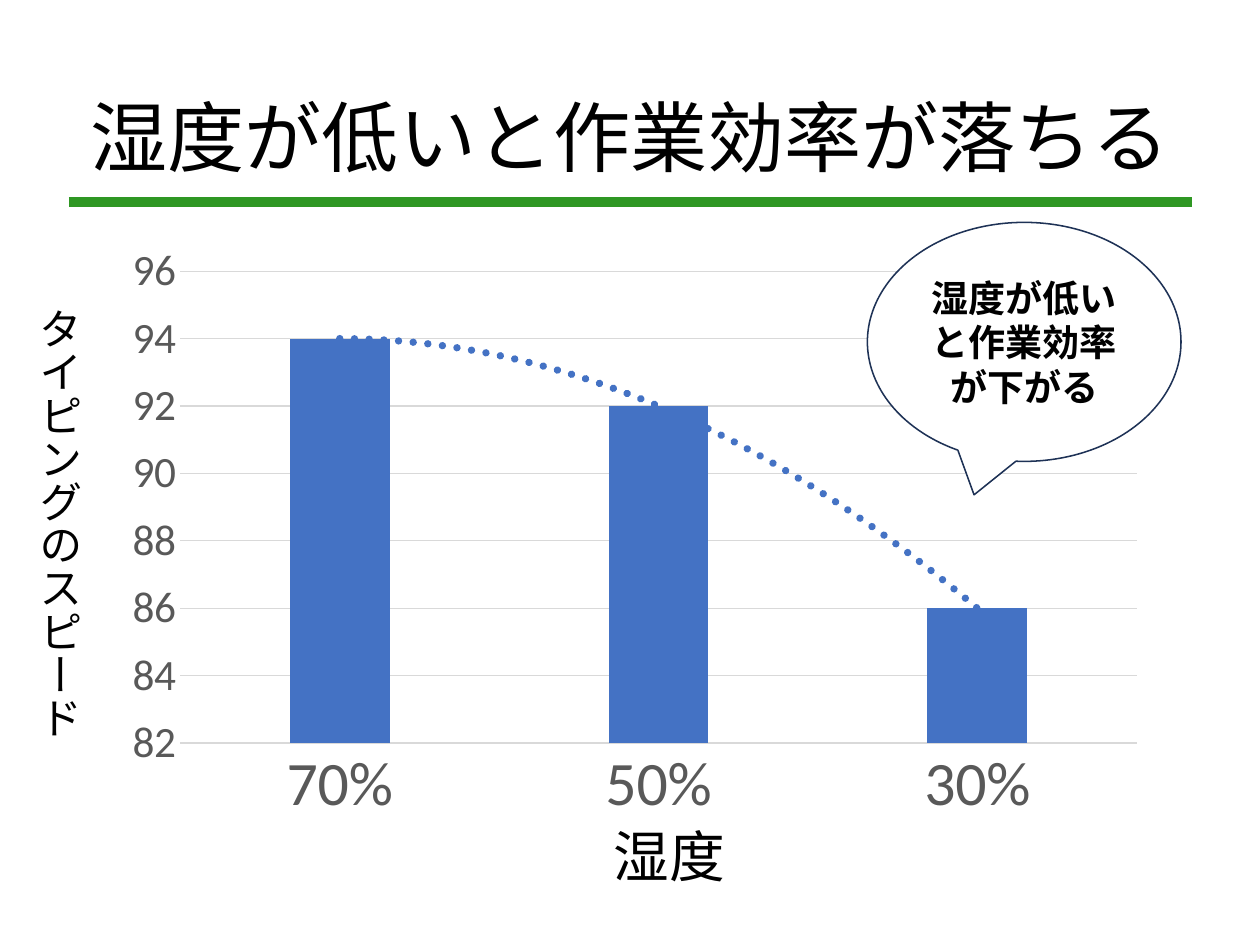
"""Build a slide showing that typing speed falls with humidity."""
from lxml import etree
from pptx import Presentation
from pptx.chart import data
from pptx.dml.color import RGBColor
from pptx.enum import chart as charts, dml, shapes, text
from pptx.oxml import ns, parse_xml
from pptx.util import Inches, Pt

BLACK = RGBColor(0x00, 0x00, 0x00)
WHITE = RGBColor(0xFF, 0xFF, 0xFF)
GRAY = RGBColor(0x59, 0x59, 0x59)
GRID = RGBColor(0xD9, 0xD9, 0xD9)
BLUE = RGBColor(0x44, 0x72, 0xC4)
NAVY = RGBColor(0x1E, 0x32, 0x56)
GREEN = RGBColor(0x2F, 0x97, 0x23)
JAPANESE_FONT = "Noto Sans CJK JP"


def write_text(shape, content, size, bold=False, align=None, anchor=None,
               wrap=True, spacing=None):
    frame = shape.text_frame
    frame.word_wrap = wrap
    frame.auto_size = text.MSO_AUTO_SIZE.NONE if wrap else text.MSO_AUTO_SIZE.SHAPE_TO_FIT_TEXT
    if anchor is not None:
        frame.vertical_anchor = anchor
    paragraph = frame.paragraphs[0]
    paragraph.alignment = align
    paragraph.line_spacing = spacing
    run = paragraph.add_run()
    run.text = content
    run.font.size = Pt(size)
    run.font.bold = bold
    run.font.name = JAPANESE_FONT
    run.font.color.rgb = BLACK
    etree.SubElement(run.font._element, ns.qn("a:ea"), typeface=JAPANESE_FONT)
    return frame


presentation = Presentation()
presentation.slide_width = Inches(11.33)
presentation.slide_height = Inches(8.5)
slide = presentation.slides.add_slide(presentation.slide_layouts[5])

title = slide.shapes.title
title.left, title.top = Inches(0.67), Inches(0.45)
title.width, title.height = Inches(10), Inches(1.64)
write_text(title, "湿度が低いと作業効率が落ちる", 49.9, align=text.PP_ALIGN.CENTER,
           anchor=text.MSO_ANCHOR.MIDDLE, spacing=0.9)

speed_data = data.CategoryChartData(number_format="General")
speed_data.categories = [0.7, 0.5, 0.3]
speed_data.categories.number_format = "0%"
speed_data.add_series("Series 1", [94, 92, 86])
chart = slide.shapes.add_chart(
    charts.XL_CHART_TYPE.COLUMN_CLUSTERED, Inches(1), Inches(2.1),
    Inches(9.42), Inches(5.4), speed_data).chart
chart.has_legend = False
chart.has_title = False
chart.font.name = "Calibri"
chart.font.size = Pt(10)

plot = chart.plots[0]
plot.gap_width = 219
plot.overlap = -27
plot.vary_by_categories = False
series = plot.series[0]
series.format.fill.solid()
series.format.fill.fore_color.rgb = BLUE

humidity_axis, speed_axis = chart.category_axis, chart.value_axis
for axis, size, number_format in ((humidity_axis, 40, "0%"), (speed_axis, 28, "General")):
    axis.major_tick_mark = axis.minor_tick_mark = charts.XL_TICK_MARK.NONE
    labels = axis.tick_labels
    labels.number_format = number_format
    labels.number_format_is_linked = False
    labels.font.name = "Calibri"
    labels.font.size = Pt(size)
    labels.font.color.rgb = GRAY
speed_axis.minimum_scale, speed_axis.maximum_scale = 82, 96
speed_axis.major_unit = 2
speed_axis.format.line.fill.background()
for line in (humidity_axis.format.line, speed_axis.major_gridlines.format.line):
    line.color.rgb = GRID
    line.width = Pt(0.75)

trendline = parse_xml(
    f'<c:trendline {ns.nsdecls("c", "a")}><c:spPr><a:ln w="{Pt(4.75)}" cap="rnd">'
    f'<a:solidFill><a:srgbClr val="{BLUE}"/></a:solidFill><a:prstDash val="sysDot"/></a:ln></c:spPr>'
    '<c:trendlineType val="poly"/><c:order val="2"/>'
    '<c:dispRSqr val="0"/><c:dispEq val="0"/></c:trendline>')
series._element.find(ns.qn("c:cat")).addprevious(trendline)

plot_area = chart._chartSpace.chart.plotArea
for old_layout in plot_area.findall(ns.qn("c:layout")):
    plot_area.remove(old_layout)
plot_area.insert(0, parse_xml(
    f'<c:layout {ns.nsdecls("c")}><c:manualLayout><c:layoutTarget val="inner"/>'
    '<c:xMode val="edge"/><c:yMode val="edge"/><c:x val="0.066"/><c:y val="0.063"/>'
    '<c:w val="0.913"/><c:h val="0.786"/></c:manualLayout></c:layout>'))

callout = slide.shapes.add_shape(
    shapes.MSO_SHAPE.OVAL_CALLOUT, Inches(7.8), Inches(2), Inches(2.82), Inches(2.15))
callout.adjustments[0], callout.adjustments[1] = -0.16, 0.64
callout.shadow.inherit = False
callout.fill.solid()
callout.fill.fore_color.rgb = WHITE
callout.line.color.rgb = NAVY
callout.line.width = Pt(1)
frame = write_text(callout, "湿度が低いと作業効率が下がる", 24, bold=True,
                   align=text.PP_ALIGN.CENTER, anchor=text.MSO_ANCHOR.MIDDLE)
frame.margin_left = frame.margin_right = frame.margin_top = frame.margin_bottom = 0

speed_label = slide.shapes.add_textbox(Inches(0.15), Inches(2.67), Inches(0.67), Inches(3.79))
frame = write_text(speed_label, "タイピングのスピード", 28, wrap=False)
frame._txBody.bodyPr.set("vert", "eaVert")

humidity_label = slide.shapes.add_textbox(Inches(5.42), Inches(7.34), Inches(1.21), Inches(0.71))
write_text(humidity_label, "湿度", 36, wrap=False)

title_rule = slide.shapes.add_connector(
    shapes.MSO_CONNECTOR.STRAIGHT, Inches(0.62), Inches(1.82), Inches(10.72), Inches(1.82))
title_rule.line.color.rgb = GREEN
title_rule.line.width = Pt(6.25)
title_rule.line.dash_style = dml.MSO_LINE.SOLID
etree.SubElement(title_rule._element.spPr, ns.qn("a:effectLst"))

presentation.save("out.pptx")
